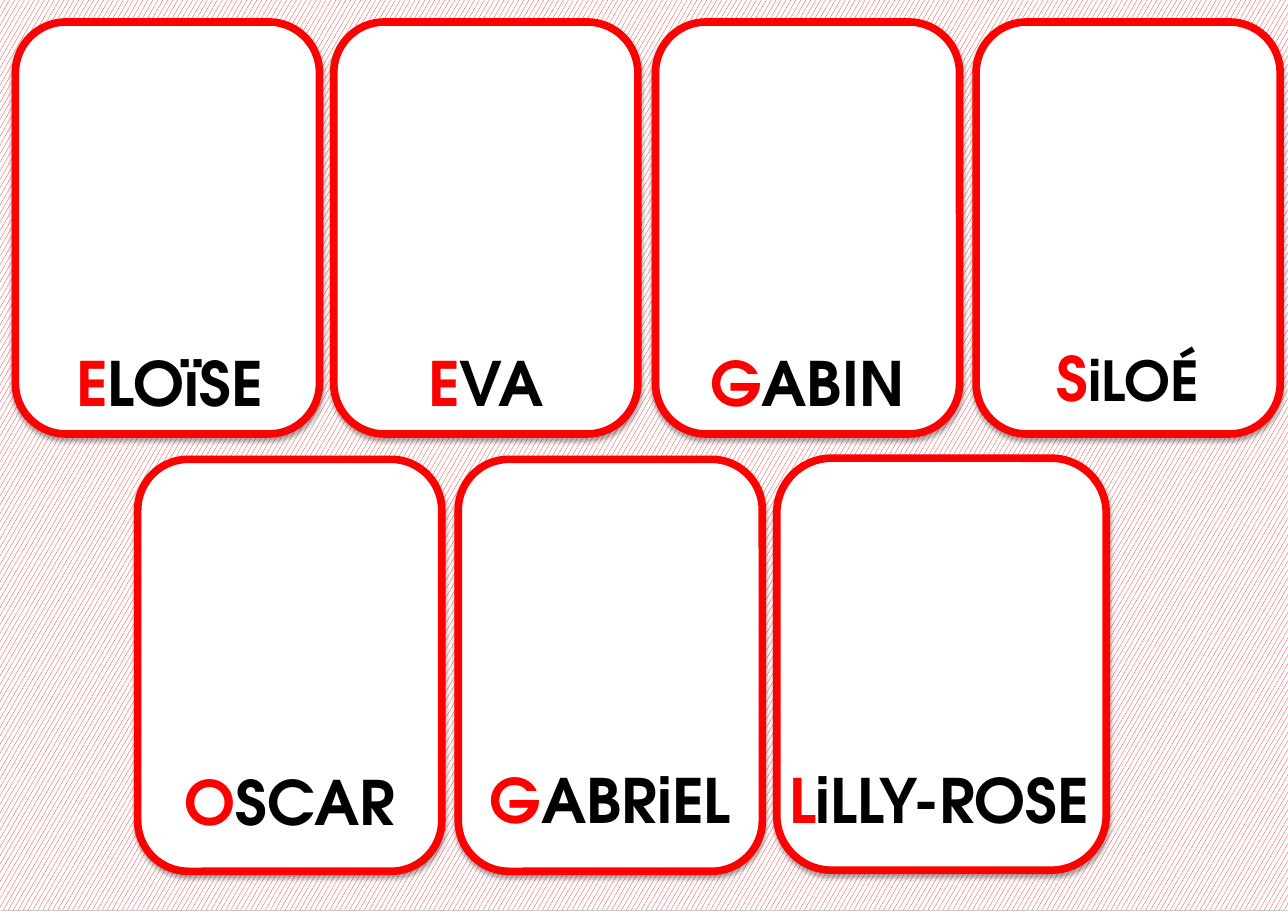
"""Build a page of seven first-name cards on a red patterned background."""
from dataclasses import dataclass

from lxml import etree
from pptx import Presentation
from pptx import util as u
from pptx.dml.color import RGBColor
from pptx.enum import dml, shapes, text
from pptx.oxml import ns

COLOURS = {"red": "FF0000", "white": "FFFFFF", "black": "000000"}
FONT = "TeX Gyre Adventor"
CARD_HEIGHT = 3.74
LABEL_HEIGHT = 0.77


@dataclass(frozen=True)
class NameCard:
    """One card with a first name; lengths are in inches."""
    name: str
    left: float
    top: float
    label_top: float
    width: float = 2.76
    label_left: float | None = None
    label_width: float = 2.76
    size: int = 40


CARDS = [
    NameCard("ELOïSE", 0.14, 0.2, 3.09, label_left=0.16),
    NameCard("EVA", 3.03, 0.2, 3.09),
    NameCard("GABIN", 5.95, 0.2, 3.09),
    NameCard("SiLOÉ", 8.86, 0.2, 3.04, size=36),
    NameCard("OSCAR", 1.25, 4.17, 6.89),
    NameCard("GABRiEL", 4.16, 4.17, 6.87),
    NameCard("LiLLY-ROSE", 7.05, 4.16, 6.87, width=2.99, label_left=6.92, label_width=3.21),
]


def colour(name: str) -> RGBColor:
    """Look up a colour of the palette."""
    return RGBColor.from_string(COLOURS[name])


def add_shadow(shape) -> None:
    """Give a shape a soft shadow that falls straight down."""
    shape.shadow.inherit = False
    effects = shape._element.spPr.find(ns.qn("a:effectLst"))
    shadow = etree.SubElement(effects, ns.qn("a:outerShdw"), blurRad=str(u.Pt(3.1)),
                              dist=str(u.Pt(1.8)), dir="5400000", rotWithShape="0")
    tint = etree.SubElement(shadow, ns.qn("a:srgbClr"), val=COLOURS["black"])
    etree.SubElement(tint, ns.qn("a:alpha"), val="35000")


def add_span(para, content: str, *, size: int, fill: str) -> None:
    """Append a bold span of text to a paragraph."""
    span = para.add_run()
    span.text = content
    span.font.name = FONT
    span.font.size = u.Pt(size)
    span.font.bold = True
    span.font.color.rgb = colour(fill)


def add_backdrop(page) -> None:
    """Cover the page with the red pattern."""
    backdrop = page.shapes.add_shape(shapes.MSO_SHAPE.RECTANGLE, 0, 0,
                                     u.Inches(11.69), u.Inches(8.26))
    backdrop.fill.patterned()
    backdrop.fill.pattern = dml.MSO_PATTERN.LARGE_CONFETTI
    backdrop.fill.fore_color.rgb = colour("red")
    backdrop.fill.back_color.rgb = colour("white")
    backdrop.line.fill.background()
    add_shadow(backdrop)


def add_frame(page, card: NameCard) -> None:
    """Draw the rounded frame of a card."""
    frame = page.shapes.add_shape(
        shapes.MSO_SHAPE.ROUNDED_RECTANGLE, u.Inches(card.left), u.Inches(card.top),
        u.Inches(card.width), u.Inches(CARD_HEIGHT))
    frame.fill.solid()
    frame.fill.fore_color.rgb = colour("white")
    frame.line.color.rgb = colour("red")
    frame.line.width = u.Pt(5)
    add_shadow(frame)


def add_label(page, card: NameCard) -> None:
    """Write the name of a card with its initial in red."""
    left = card.left if card.label_left is None else card.label_left
    box = page.shapes.add_textbox(u.Inches(left), u.Inches(card.label_top),
                                  u.Inches(card.label_width), u.Inches(LABEL_HEIGHT))
    box.text_frame.word_wrap = True
    box.text_frame.auto_size = text.MSO_AUTO_SIZE.SHAPE_TO_FIT_TEXT
    para = box.text_frame.paragraphs[0]
    para.alignment = text.PP_ALIGN.CENTER
    add_span(para, card.name[0], size=40, fill="red")
    add_span(para, card.name[1:], size=card.size, fill="black")


def main() -> None:
    """Build and save the deck."""
    deck = Presentation()
    deck.slide_width = u.Inches(11.69)
    deck.slide_height = u.Inches(8.27)
    page = deck.slides.add_slide(deck.slide_layouts[6])
    add_backdrop(page)
    for card in CARDS:
        add_frame(page, card)
    for card in CARDS:
        add_label(page, card)
    deck.save("out.pptx")


if __name__ == "__main__":
    main()
